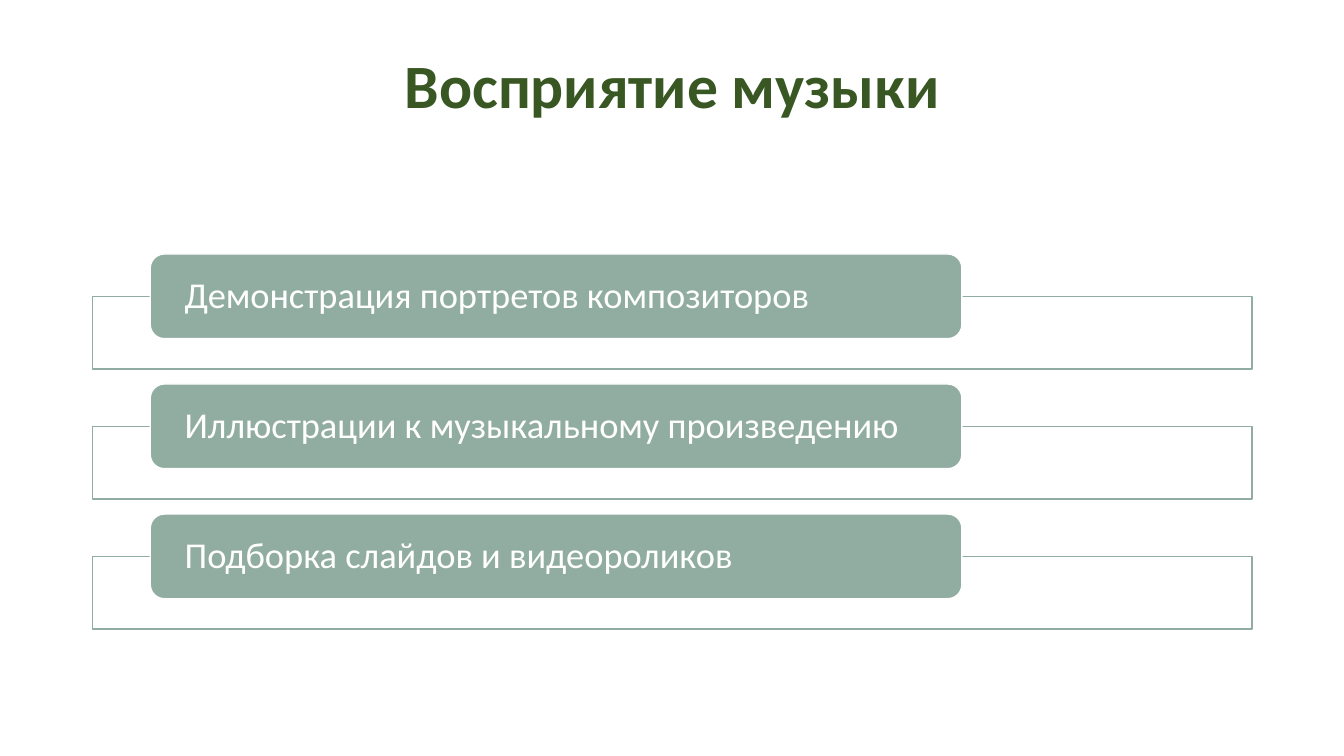
from lxml.etree import SubElement
from pptx import Presentation
from pptx.dml.color import RGBColor
from pptx.enum.shapes import MSO_SHAPE
from pptx.enum.text import MSO_ANCHOR, PP_ALIGN
from pptx.oxml.ns import qn
from pptx.util import Inches, Pt

COLORS = {"title": "385723", "sage": "91ADA1", "white": "FFFFFF"}
TITLE = {"size": Pt(44), "bold": True, "name": "Calibri"}
LABEL = {"size": Pt(26), "bold": False, "name": "Calibri"}
ITEMS = [
    "Демонстрация портретов композиторов",
    "Иллюстрации к музыкальному произведению",
    "Подборка слайдов и видеороликов",
]
TOP, STEP = 2.52, 1.29


def color(key):
    return RGBColor.from_string(COLORS[key])


def write(frame, text, style, key, align):
    frame.word_wrap = True
    frame.vertical_anchor = MSO_ANCHOR.MIDDLE
    para = frame.paragraphs[0]
    para.alignment = align
    para.line_spacing = 0.9
    run = para.add_run()
    run.text = text
    for name, value in style.items():
        setattr(run.font, name, value)
    run.font.color.rgb = color(key)


def add_box(slide, kind, place, fill, line):
    box = slide.shapes.add_shape(kind, *map(Inches, place))
    box.shadow.inherit = False
    box.fill.solid()
    box.fill.fore_color.rgb = color(fill)
    box.line.color.rgb = color(line)
    box.line.width = Pt(1)
    return box


def add_title(slide, text):
    title = slide.shapes.title
    place = {"left": 0.92, "top": 0.4, "width": 11.5, "height": 0.96}
    for name, value in place.items():
        setattr(title, name, Inches(value))
    write(title.text_frame, text, TITLE, "title", PP_ALIGN.CENTER)


def add_item(slide, text, top):
    # Outlined frame behind the label, slightly transparent
    frame = add_box(slide, MSO_SHAPE.RECTANGLE,
                    (0.92, top + 0.42, 11.5, 0.72), "white", "sage")
    tint = frame.fill._xPr.find(qn("a:solidFill"))[0]
    SubElement(tint, qn("a:alpha"), val="90000")

    # Rounded label
    label = add_box(slide, MSO_SHAPE.ROUNDED_RECTANGLE,
                    (1.49, top, 8.05, 0.84), "sage", "white")
    body = label.text_frame
    body.margin_left = body.margin_right = Inches(0.3)
    body.margin_top = body.margin_bottom = 0
    write(body, text, LABEL, "white", PP_ALIGN.LEFT)


def main():
    deck = Presentation()
    deck.slide_width, deck.slide_height = Inches(13.33), Inches(7.5)
    slide = deck.slides.add_slide(deck.slide_layouts[5])
    add_title(slide, "Восприятие музыки")
    for row, text in enumerate(ITEMS):
        add_item(slide, text, TOP + row * STEP)
    deck.save("out.pptx")


if __name__ == "__main__":
    main()
